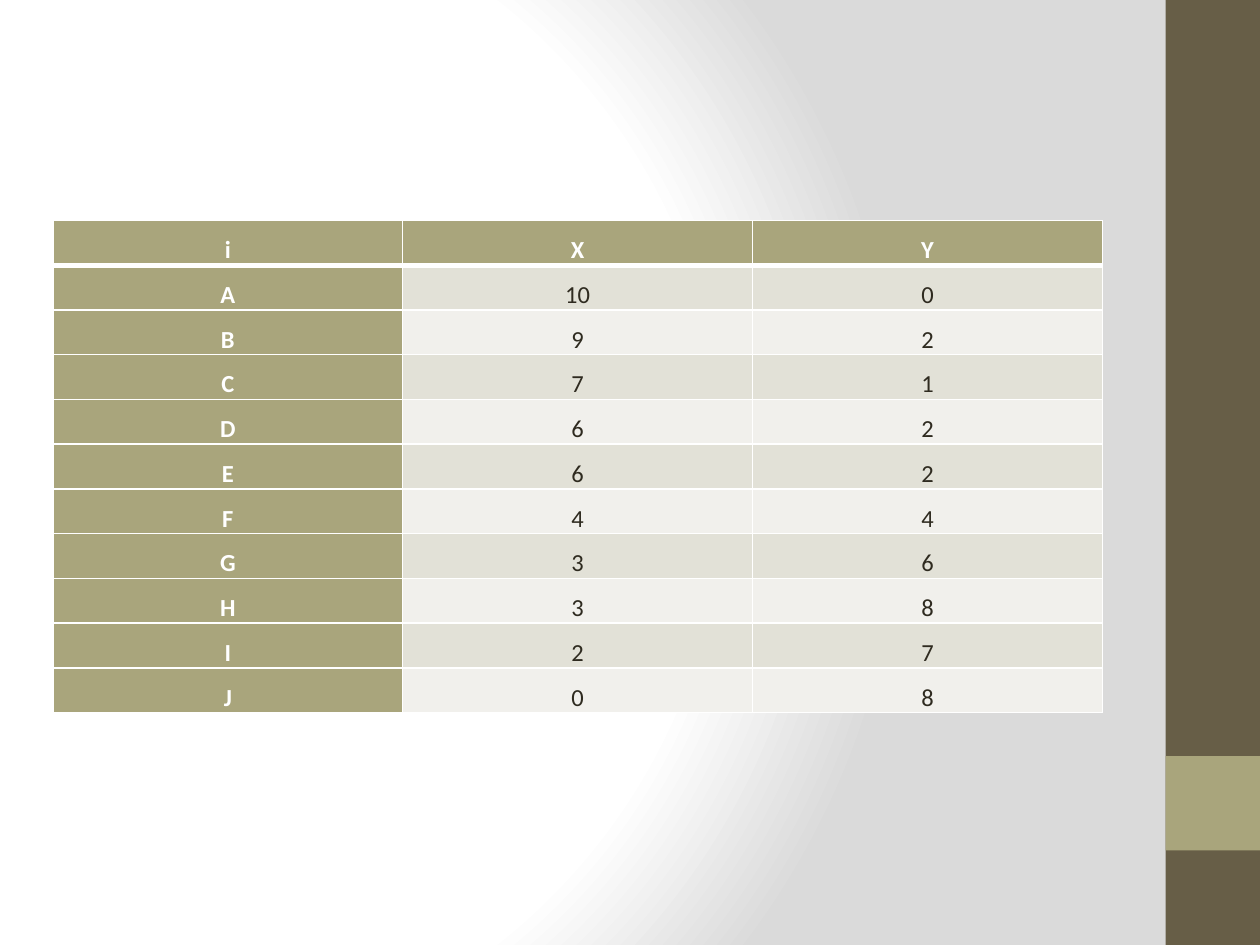
from dataclasses import dataclass

from pptx import Presentation
from pptx.dml.color import RGBColor
from pptx.enum.shapes import MSO_SHAPE
from pptx.enum.text import MSO_ANCHOR, PP_ALIGN
from pptx.oxml import parse_xml
from pptx.oxml.ns import nsdecls, qn
from pptx.util import Inches, Pt


@dataclass(frozen=True)
class Theme:
    font: str = "Calibri"
    size: int = 14
    line_spacing: float = 1.5
    white: str = "FFFFFF"
    backdrop: str = "DADADA"
    sidebar: str = "675E47"
    accent: str = "A9A57C"
    text: str = "2F2B20"
    bands: tuple = ("E2E1D7", "F1F0EC")
    thin: int = 1
    thick: int = 3


THEME = Theme()
WIDTH, HEIGHT = Inches(10), Inches(7.5)
HEADINGS = ("i", "X", "Y")
POINTS = (
    ("A", 10, 0), ("B", 9, 2), ("C", 7, 1), ("D", 6, 2), ("E", 6, 2),
    ("F", 4, 4), ("G", 3, 6), ("H", 3, 8), ("I", 2, 7), ("J", 0, 8),
)


def paint_background(slide):
    slide.background.fill.gradient()
    gradient = slide.element.find(".//" + qn("a:gradFill"))
    stops = ((0, THEME.white), (75, THEME.white), (100, THEME.backdrop))
    stop_xml = "".join(
        f'<a:gs pos="{position * 1000}"><a:srgbClr val="{color}"/></a:gs>'
        for position, color in stops
    )
    gradient.getparent().replace(gradient, parse_xml(
        f'<a:gradFill {nsdecls("a")} rotWithShape="1"><a:gsLst>{stop_xml}</a:gsLst>'
        '<a:path path="circle"><a:fillToRect l="20000" t="50000" r="100000" b="50000"/>'
        "</a:path></a:gradFill>"
    ))


def add_block(slide, left, top, width, height, color):
    block = slide.shapes.add_shape(
        MSO_SHAPE.RECTANGLE, int(left), int(top), int(width), int(height))
    block.shadow.inherit = False
    block.fill.solid()
    block.fill.fore_color.rgb = RGBColor.from_string(color)
    block.line.fill.background()


def add_sidebar(slide, left, top, width, height):
    """Full-height bar with a square accent one tenth above its foot."""
    add_block(slide, left, top, width, height, THEME.sidebar)
    add_block(slide, left, top + height * 0.8, width, height * 0.1, THEME.accent)


def set_borders(cell, bottom, top):
    properties = cell._tc.get_or_add_tcPr()
    widths = {"lnL": THEME.thin, "lnR": THEME.thin, "lnT": top, "lnB": bottom}
    for index, (side, points) in enumerate(widths.items()):
        properties.insert(index, parse_xml(
            f'<a:{side} {nsdecls("a")} w="{Pt(points)}"><a:solidFill>'
            f'<a:srgbClr val="{THEME.white}"/></a:solidFill></a:{side}>'
        ))


def format_cell(cell, value, row, column):
    is_heading = row == 0 or column == 0
    cell.fill.solid()
    cell.fill.fore_color.rgb = RGBColor.from_string(
        THEME.accent if is_heading else THEME.bands[(row - 1) % 2])
    set_borders(
        cell,
        bottom=THEME.thick if row == 0 else THEME.thin,
        top=THEME.thick if row == 1 else THEME.thin,
    )
    cell.vertical_anchor = MSO_ANCHOR.MIDDLE
    cell.margin_left = cell.margin_right = Inches(0.08)
    cell.margin_top = cell.margin_bottom = 0
    cell.text_frame.text = str(value)
    paragraph = cell.text_frame.paragraphs[0]
    paragraph.alignment = PP_ALIGN.CENTER
    paragraph.line_spacing = THEME.line_spacing
    font = paragraph.runs[0].font
    font.name, font.size, font.bold = THEME.font, Pt(THEME.size), is_heading
    font.color.rgb = RGBColor.from_string(THEME.white if is_heading else THEME.text)


def add_point_table(slide, left, top, width, height):
    rows = (HEADINGS, *POINTS)
    table = slide.shapes.add_table(
        len(rows), len(HEADINGS), left, top, width, height).table
    table.first_col = True
    for row, values in enumerate(rows):
        for column, value in enumerate(values):
            format_cell(table.cell(row, column), value, row, column)


def main():
    presentation = Presentation()
    presentation.slide_width, presentation.slide_height = WIDTH, HEIGHT
    slide = presentation.slides.add_slide(presentation.slide_layouts[6])
    paint_background(slide)
    sidebar_width = Inches(0.75)
    add_sidebar(slide, WIDTH - sidebar_width, 0, sidebar_width, HEIGHT)
    add_point_table(slide, Inches(0.42), Inches(1.75), Inches(8.33), Inches(3.85))
    presentation.save("out.pptx")


if __name__ == "__main__":
    main()
